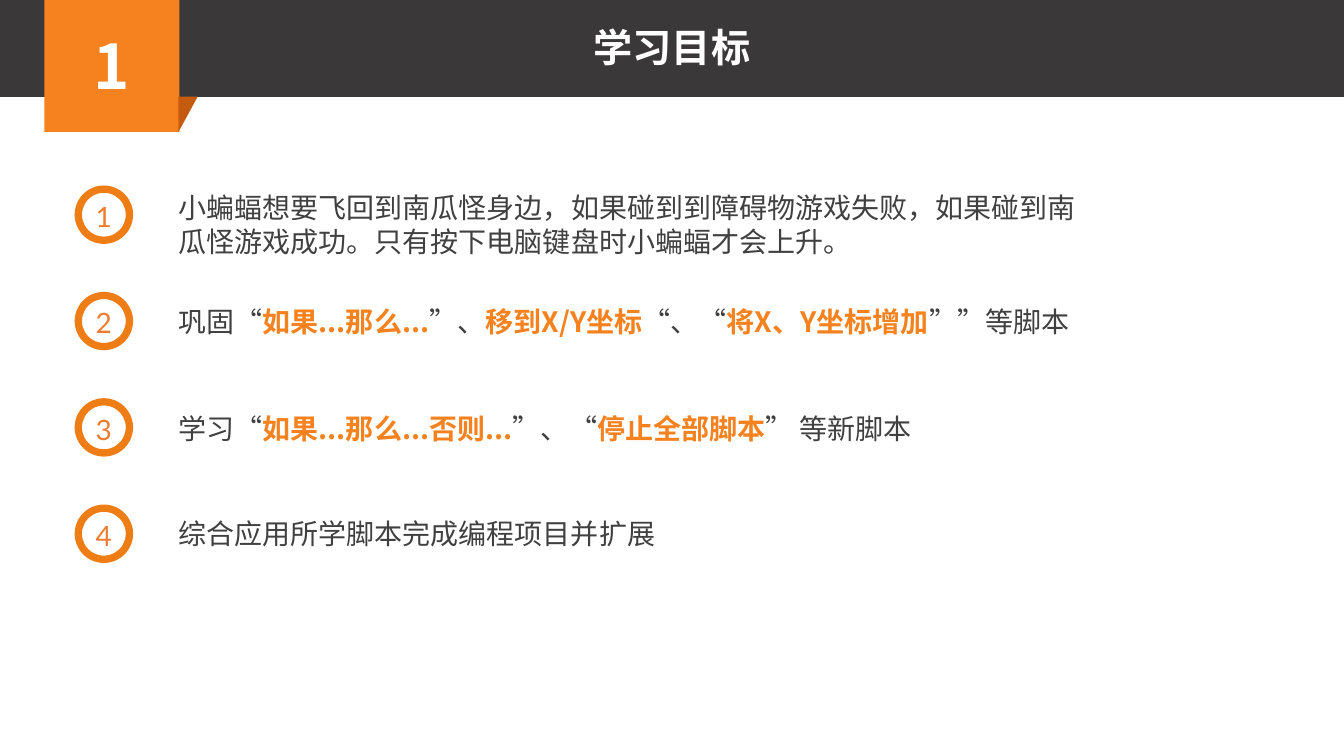
from lxml import etree
from pptx import Presentation
from pptx.dml.color import RGBColor
from pptx.enum.shapes import MSO_SHAPE
from pptx.enum.text import MSO_ANCHOR, PP_ALIGN
from pptx.oxml.ns import qn
from pptx.util import Inches, Pt

CHARCOAL = RGBColor(0x3A, 0x38, 0x38)
ORANGE = RGBColor(0xF5, 0x82, 0x1F)
RUST = RGBColor(0xC5, 0x5A, 0x11)
RING = RGBColor(0xEE, 0x7D, 0x16)
NUMBER = RGBColor(0xED, 0x7D, 0x31)
GREY = RGBColor(0x40, 0x40, 0x40)
WHITE = RGBColor(0xFF, 0xFF, 0xFF)
CHINESE = "Noto Sans CJK SC"

deck = Presentation()
deck.slide_width = Inches(13.33)
deck.slide_height = Inches(7.5)
page = deck.slides.add_slide(deck.slide_layouts[6])


def add_block(kind, left, top, width, height, color):
    shape = page.shapes.add_shape(
        kind, Inches(left), Inches(top), Inches(width), Inches(height))
    shape.shadow.inherit = False
    shape.fill.solid()
    shape.fill.fore_color.rgb = color
    shape.line.fill.background()
    return shape


def write(shape, spans, size, color, font=CHINESE, bold=False, align=PP_ALIGN.LEFT):
    para = shape.text_frame.paragraphs[0]
    para.alignment = align
    para.font.size = Pt(size)
    para.font.name = font
    para.font.color.rgb = color
    para.font.bold = bold
    latin = para._p.pPr.find(qn("a:defRPr")).find(qn("a:latin"))
    east_asian = etree.Element(qn("a:ea"), typeface=font)
    latin.addnext(east_asian)
    for index, text in enumerate(spans):
        span = para.add_run()
        span.text = text
        if index % 2:
            span.font.bold = True
            span.font.color.rgb = ORANGE


add_block(MSO_SHAPE.RECTANGLE, 0, -0.03, 13.33, 0.99, CHARCOAL)
badge = add_block(MSO_SHAPE.RECTANGLE, 0.44, -0.03, 1.34, 1.34, ORANGE)
badge.text_frame.vertical_anchor = MSO_ANCHOR.MIDDLE
write(badge, ["1"], 44, WHITE, bold=True, align=PP_ALIGN.CENTER)
fold = add_block(MSO_SHAPE.RIGHT_TRIANGLE, 1.77, 0.96, 0.19, 0.35, RUST)
fold._element.spPr.xfrm.set("flipV", "1")

title = page.shapes.add_textbox(Inches(4.48), Inches(0.18), Inches(4.37), Inches(0.57))
title.text_frame.word_wrap = True
write(title, ["学习目标"], 28, WHITE, bold=True, align=PP_ALIGN.CENTER)

# Spans alternate between plain and highlighted text.
goals = [
    (1.84, 9.28, ["小蝙蝠想要飞回到南瓜怪身边，如果碰到到障碍物游戏失败，"
                  "如果碰到南瓜怪游戏成功。只有按下电脑键盘时小蝙蝠才会上升。"]),
    (2.97, 9.11, ["巩固“", "如果...那么...", "”、", "移到X/Y坐标", "“、“",
                  "将X、Y坐标增加", "””等脚本"]),
    (4.03, 7.78, ["学习“", "如果...那么...否则...", "”、“", "停止全部脚本",
                  "” 等新脚本"]),
    (5.08, 7.23, ["综合应用所学脚本完成编程项目并扩展"]),
]
for index, (text_top, width, spans) in enumerate(goals):
    ring_top = 1.84 + index * 1.055
    ring = add_block(MSO_SHAPE.DONUT, 0.74, ring_top, 0.58, 0.58, RING)
    ring.adjustments[0] = 0.125
    number = page.shapes.add_textbox(
        Inches(0.85), Inches(ring_top + 0.09), Inches(0.36), Inches(0.44))
    number.text_frame.word_wrap = False
    write(number, [str(index + 1)], 20, NUMBER, font="Lato")
    goal = page.shapes.add_textbox(
        Inches(1.67), Inches(text_top), Inches(width), Inches(0.44))
    goal.text_frame.word_wrap = True
    write(goal, spans, 20, GREY)

deck.save("out.pptx")
